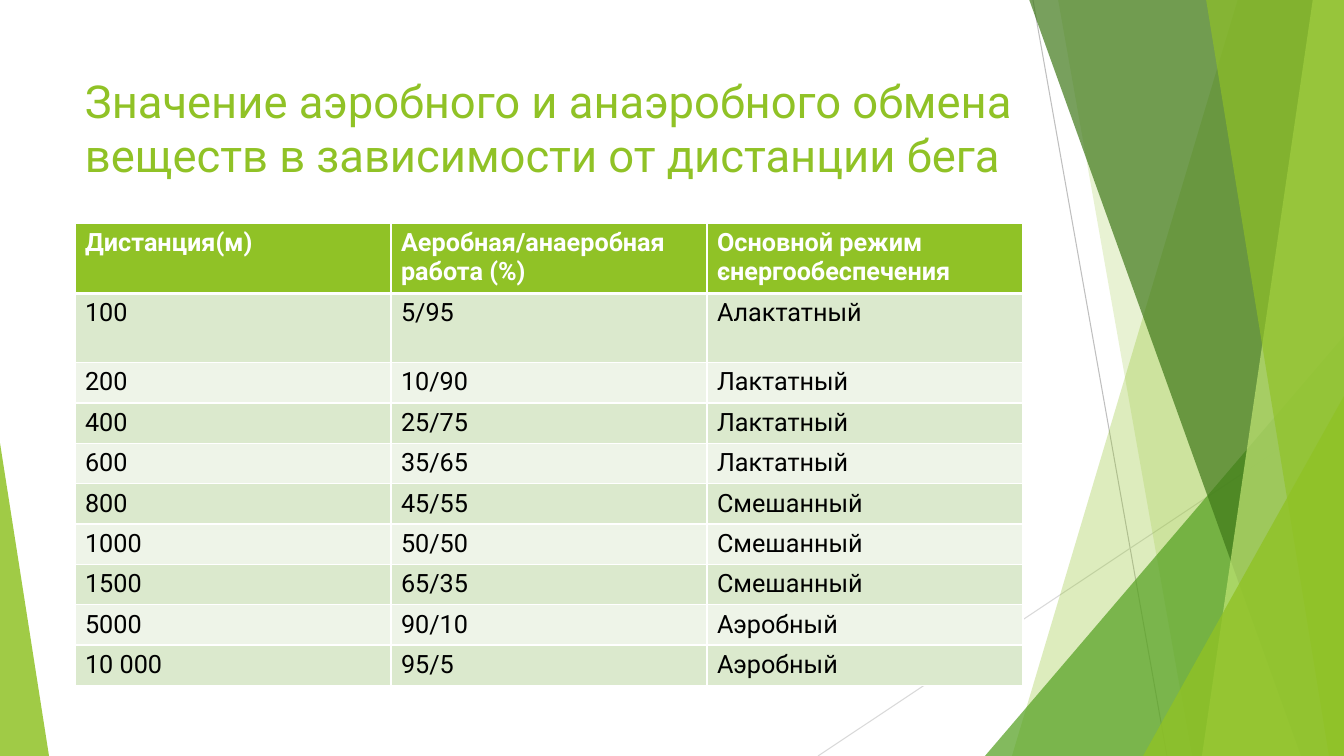
from lxml.etree import SubElement
from pptx import Presentation
from pptx.dml.color import RGBColor
from pptx.enum.shapes import MSO_CONNECTOR, MSO_SHAPE
from pptx.enum.text import MSO_ANCHOR
from pptx.oxml.ns import qn
from pptx.util import Emu, Pt

SLIDE_WIDTH, SLIDE_HEIGHT = 1344, 756
EMU_PER_PX = 12192000 / SLIDE_WIDTH
FONT = "Roboto"
GREEN, WHITE, BLACK = "90C226", "FFFFFF", "000000"
BAND_COLOURS = ("EEF4E8", "DBE9CD")

TITLE = "Значение аэробного и анаэробного обмена веществ в зависимости от дистанции бега"
TABLE_ROWS = [
    ("Дистанция(м)", "Аеробная/анаеробная работа (%)", "Основной режим єнергообеспечения"),
    ("100", "5/95", "Алактатный"),
    ("200", "10/90", "Лактатный"),
    ("400", "25/75", "Лактатный"),
    ("600", "35/65", "Лактатный"),
    ("800", "45/55", "Смешанный"),
    ("1000", "50/50", "Смешанный"),
    ("1500", "65/35", "Смешанный"),
    ("5000", "90/10", "Аэробный"),
    ("10 000", "95/5", "Аэробный"),
]
ROW_HEIGHTS = [68, 69] + [39] * 8

# Start, end and colour of the thin lines
LINES = [
    ((1033, 0), (1167, 756), "BFBFBF"),
    ((1344, 406), (818, 756), "D9D9D9"),
]
# Top left x, bottom left x, colour and opacity; each band runs to the right edge
BACK_BANDS = [(1238, 1012, GREEN, 30), (1058, 1192, GREEN, 20)]
FRONT_BANDS = [
    (1029, 1301, "3F7819", 70),
    (1313, 1202, "C0E474", 70),
    (1206, 1329, GREEN, 65),
]


def px(length):
    return Emu(round(length * EMU_PER_PX))


def colour(value):
    return RGBColor.from_string(value)


def apply_format(target, values):
    for name, value in values.items():
        setattr(target, name, value)


def paint(shape, fill_colour, opacity):
    shape.shadow.inherit = False
    shape.line.fill.background()
    shape.fill.solid()
    shape.fill.fore_color.rgb = colour(fill_colour)
    colour_element = shape.fill._xPr.find(qn("a:solidFill"))[0]
    SubElement(colour_element, qn("a:alpha"), val=str(opacity * 1000))


def add_line(slide, start, end, line_colour):
    connector = slide.shapes.add_connector(
        MSO_CONNECTOR.STRAIGHT, *map(px, start + end))
    connector.line.color.rgb = colour(line_colour)
    connector.line.width = Pt(0.75)
    SubElement(connector._element.spPr, qn("a:effectLst"))


def add_band(slide, top_x, bottom_x, fill_colour, opacity):
    builder = slide.shapes.build_freeform(top_x, -1, scale=EMU_PER_PX)
    builder.add_line_segments([
        (SLIDE_WIDTH, -1), (SLIDE_WIDTH, SLIDE_HEIGHT), (bottom_x, SLIDE_HEIGHT)])
    paint(builder.convert_to_shape(), fill_colour, opacity)


def add_triangle(slide, left, top, width, apex, fill_colour, opacity):
    shape = slide.shapes.add_shape(
        MSO_SHAPE.ISOSCELES_TRIANGLE,
        px(left), px(top), px(width), px(SLIDE_HEIGHT - top))
    shape.adjustments[0] = apex
    paint(shape, fill_colour, opacity)


def write_text(text_frame, text, size, text_colour, bold=False):
    paragraph = text_frame.paragraphs[0]
    run = paragraph.add_run()
    run.text = text
    apply_format(run.font, {"name": FONT, "size": Pt(size), "bold": bold})
    run.font.color.rgb = colour(text_colour)


def add_title(slide):
    shape = slide.shapes.add_textbox(px(75), px(68), px(948), px(145))
    apply_format(shape.text_frame, {
        "word_wrap": True, "vertical_anchor": MSO_ANCHOR.TOP})
    write_text(shape.text_frame, TITLE, 32.4, GREEN)


def set_borders(cell, widths):
    properties = cell._tc.get_or_add_tcPr()
    for side, width in widths.items():
        border = SubElement(properties, qn(f"a:ln{side}"), w=str(Pt(width)))
        fill = SubElement(border, qn("a:solidFill"))
        SubElement(fill, qn("a:srgbClr"), val=WHITE)


def add_distance_table(slide):
    column_count = len(TABLE_ROWS[0])
    table = slide.shapes.add_table(
        len(TABLE_ROWS), column_count,
        px(75), px(223), px(948), px(sum(ROW_HEIGHTS))).table
    for column in table.columns:
        column.width = px(948 / column_count)
    for row_index, texts in enumerate(TABLE_ROWS):
        table.rows[row_index].height = px(ROW_HEIGHTS[row_index])
        header = row_index == 0
        for column_index, text in enumerate(texts):
            cell = table.cell(row_index, column_index)
            set_borders(cell, {
                "L": 1, "R": 1,
                "T": 3 if row_index == 1 else 1,
                "B": 3 if header else 1})
            cell.fill.solid()
            cell.fill.fore_color.rgb = colour(
                GREEN if header else BAND_COLOURS[row_index % 2])
            write_text(cell.text_frame, text, 18, WHITE if header else BLACK, header)


def main():
    presentation = Presentation()
    apply_format(presentation, {
        "slide_width": px(SLIDE_WIDTH), "slide_height": px(SLIDE_HEIGHT)})
    slide = presentation.slides.add_slide(presentation.slide_layouts[6])

    # Green facets, from back to front
    for line in LINES:
        add_line(slide, *line)
    for band in BACK_BANDS:
        add_band(slide, *band)
    add_triangle(slide, 985, 336, 359, 1, "54A021", 72)
    for band in FRONT_BANDS:
        add_band(slide, *band)
    add_triangle(slide, 1143, 396, 201, 1, GREEN, 80)
    add_triangle(slide, 0, 443, 49, 0, GREEN, 85)

    # Content
    add_title(slide)
    add_distance_table(slide)

    presentation.save("out.pptx")


if __name__ == "__main__":
    main()
